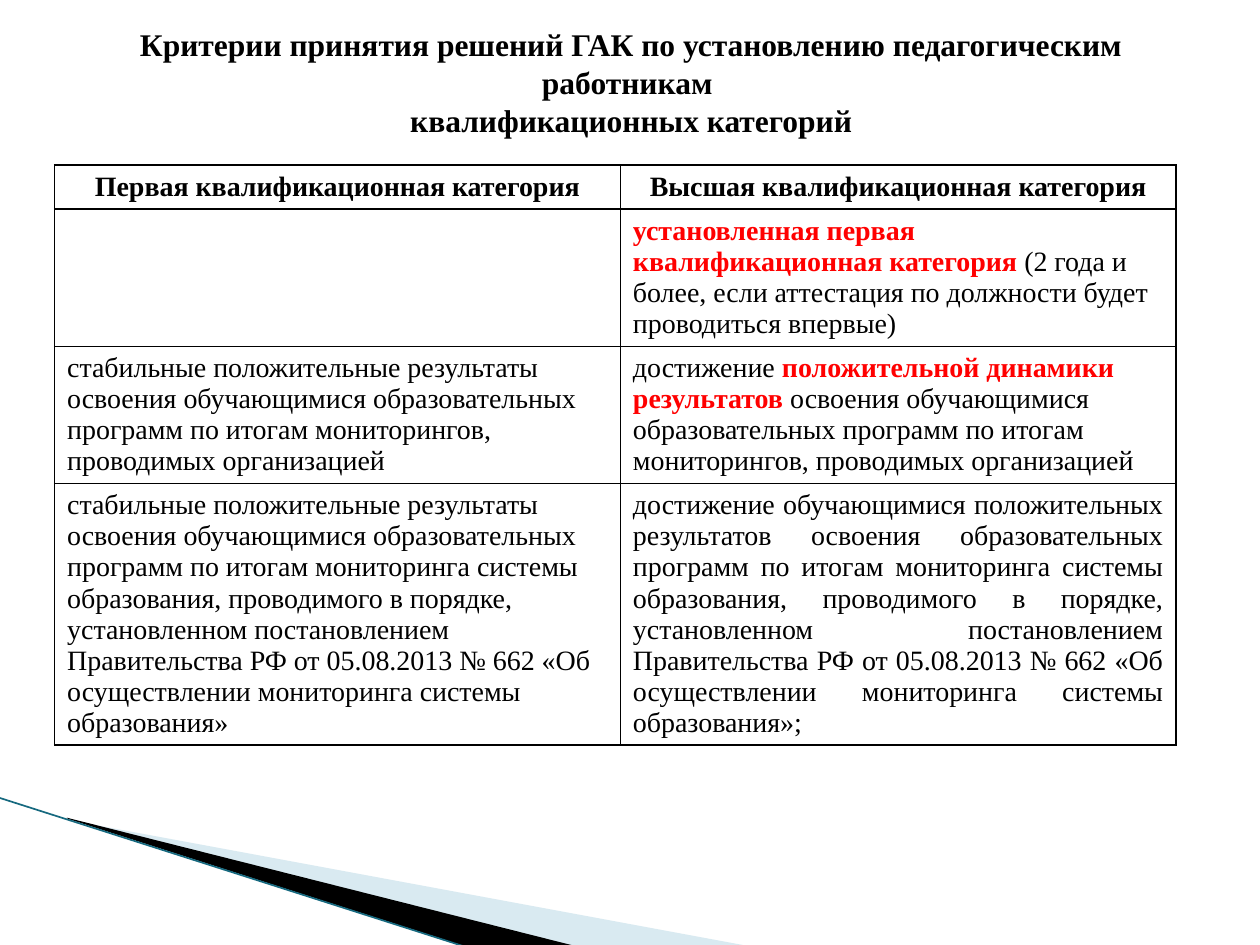
from dataclasses import dataclass

from lxml import etree
from pptx import Presentation
from pptx.dml.color import RGBColor
from pptx.enum.shapes import MSO_CONNECTOR
from pptx.enum.text import MSO_ANCHOR, PP_ALIGN
from pptx.oxml.ns import qn
from pptx.util import Pt

LEFT, CENTER, JUSTIFY = PP_ALIGN.LEFT, PP_ALIGN.CENTER, PP_ALIGN.JUSTIFY
MIDDLE = MSO_ANCHOR.MIDDLE
STRAIGHT = MSO_CONNECTOR.STRAIGHT
FONT = "Times New Roman"
BLACK, RED, PALE_BLUE, TEAL = "000000", "FF0000", "A0CBDC", "16697F"


@dataclass
class Span:
    text: str
    color: str = BLACK
    bold: bool = False


@dataclass
class Entry:
    spans: list[Span]
    align: PP_ALIGN = LEFT


@dataclass
class Wedge:
    points: list[tuple[float, float]]
    color: str
    opacity: int = 100


def rgb(value: str) -> RGBColor:
    return RGBColor.from_string(value)


def add_span(paragraph, span: Span, size: float) -> None:
    run = paragraph.add_run()
    run.text = span.text
    run.font.name = FONT
    run.font.size = Pt(size)
    run.font.bold = span.bold
    run.font.color.rgb = rgb(span.color)


def draw_wedge(slide, wedge: Wedge) -> None:
    (x, y), *others = [(Pt(px), Pt(py)) for px, py in wedge.points]
    builder = slide.shapes.build_freeform(x, y)
    builder.add_line_segments(others, close=True)
    shape = builder.convert_to_shape()
    shape.shadow.inherit = False
    shape.fill.solid()
    shape.fill.fore_color.rgb = rgb(wedge.color)
    shape.line.fill.background()
    if wedge.opacity < 100:
        color = shape.fill._xPr.find(f".//{qn('a:srgbClr')}")
        etree.SubElement(color, qn("a:alpha"), val=str(wedge.opacity * 1000))


def border_cell(cell, color: str, width: float) -> None:
    properties = cell._tc.get_or_add_tcPr()
    for side in ("lnL", "lnR", "lnT", "lnB"):
        line = etree.SubElement(properties, qn(f"a:{side}"), w=str(Pt(width)))
        fill = etree.SubElement(line, qn("a:solidFill"))
        etree.SubElement(fill, qn("a:srgbClr"), val=color)


def fill_cell(cell, entry: Entry) -> None:
    border_cell(cell, BLACK, 1)
    cell.fill.background()
    paragraph = cell.text_frame.paragraphs[0]
    paragraph.alignment = entry.align
    for span in entry.spans:
        add_span(paragraph, span, 16)


WEDGES = [
    Wedge([(39.6, 468.7), (428.4, 540.7), (328.3, 540.7), (39.6, 468)], PALE_BLUE, 40),
    Wedge([(38.2, 467.3), (329, 540.7), (267.8, 541.4), (38.9, 468)], BLACK),
]

TITLE_LINES = [
    "Критерии принятия решений ГАК по установлению педагогическим работникам ",
    "квалификационных категорий",
]

MONITORING = (
    "образовательных программ по итогам мониторинга системы образования, "
    "проводимого в порядке, установленном постановлением Правительства РФ "
    "от 05.08.2013 № 662 «Об осуществлении мониторинга системы образования»"
)
ORGANIZATION = (
    "образовательных программ по итогам мониторингов, проводимых организацией"
)
STABLE = "стабильные положительные результаты освоения обучающимися "

CRITERIA = [
    [
        Entry([Span("Первая квалификационная категория", bold=True)], CENTER),
        Entry([Span("Высшая квалификационная категория", bold=True)], CENTER),
    ],
    [
        Entry([]),
        Entry([
            Span("установленная первая квалификационная категория ", RED, True),
            Span("(2 года и более, если аттестация по должности будет "
                 "проводиться впервые)"),
        ]),
    ],
    [
        Entry([Span(STABLE + ORGANIZATION)]),
        Entry([
            Span("достижение "),
            Span("положительной динамики результатов", RED, True),
            Span(" освоения обучающимися " + ORGANIZATION),
        ]),
    ],
    [
        Entry([Span(STABLE + MONITORING)]),
        Entry([Span("достижение обучающимися положительных результатов освоения "
                    + MONITORING + ";")], JUSTIFY),
    ],
]
COLUMN_WIDTHS = [323.3, 317.5]
ROW_HEIGHTS = [25.2, 78.4, 78.4, 149.2]


def main() -> None:
    deck = Presentation()
    deck.slide_width, deck.slide_height = Pt(720), Pt(540)
    slide = deck.slides.add_slide(deck.slide_layouts[6])

    # Corner decoration
    for wedge in WEDGES:
        draw_wedge(slide, wedge)
    edge = slide.shapes.add_connector(
        STRAIGHT, Pt(-0.7), Pt(455.8), Pt(267.1), Pt(541.4))
    edge.line.color.rgb = rgb(TEAL)
    edge.line.width = Pt(0.95)
    etree.SubElement(edge._element.spPr, qn("a:effectLst"))

    # Criteria table
    table = slide.shapes.add_table(
        len(ROW_HEIGHTS), len(COLUMN_WIDTHS), Pt(31.2), Pt(94.3),
        Pt(sum(COLUMN_WIDTHS)), Pt(sum(ROW_HEIGHTS))).table
    table.first_row = table.horz_banding = False
    for column, width in zip(table.columns, COLUMN_WIDTHS):
        column.width = Pt(width)
    for row, height, entries in zip(table.rows, ROW_HEIGHTS, CRITERIA):
        row.height = Pt(height)
        for cell, entry in zip(row.cells, entries):
            fill_cell(cell, entry)

    # Title
    heading = slide.shapes.add_textbox(
        Pt(36.7), Pt(20.9), Pt(648), Pt(73.4)).text_frame
    heading.word_wrap = True
    heading.vertical_anchor = MIDDLE
    heading.margin_bottom = Pt(25)
    paragraph = heading.paragraphs[0]
    paragraph.alignment = CENTER
    for index, text in enumerate(TITLE_LINES):
        if index:
            paragraph.add_line_break()
        add_span(paragraph, Span(text, bold=True), 18)

    deck.save("out.pptx")


if __name__ == "__main__":
    main()
